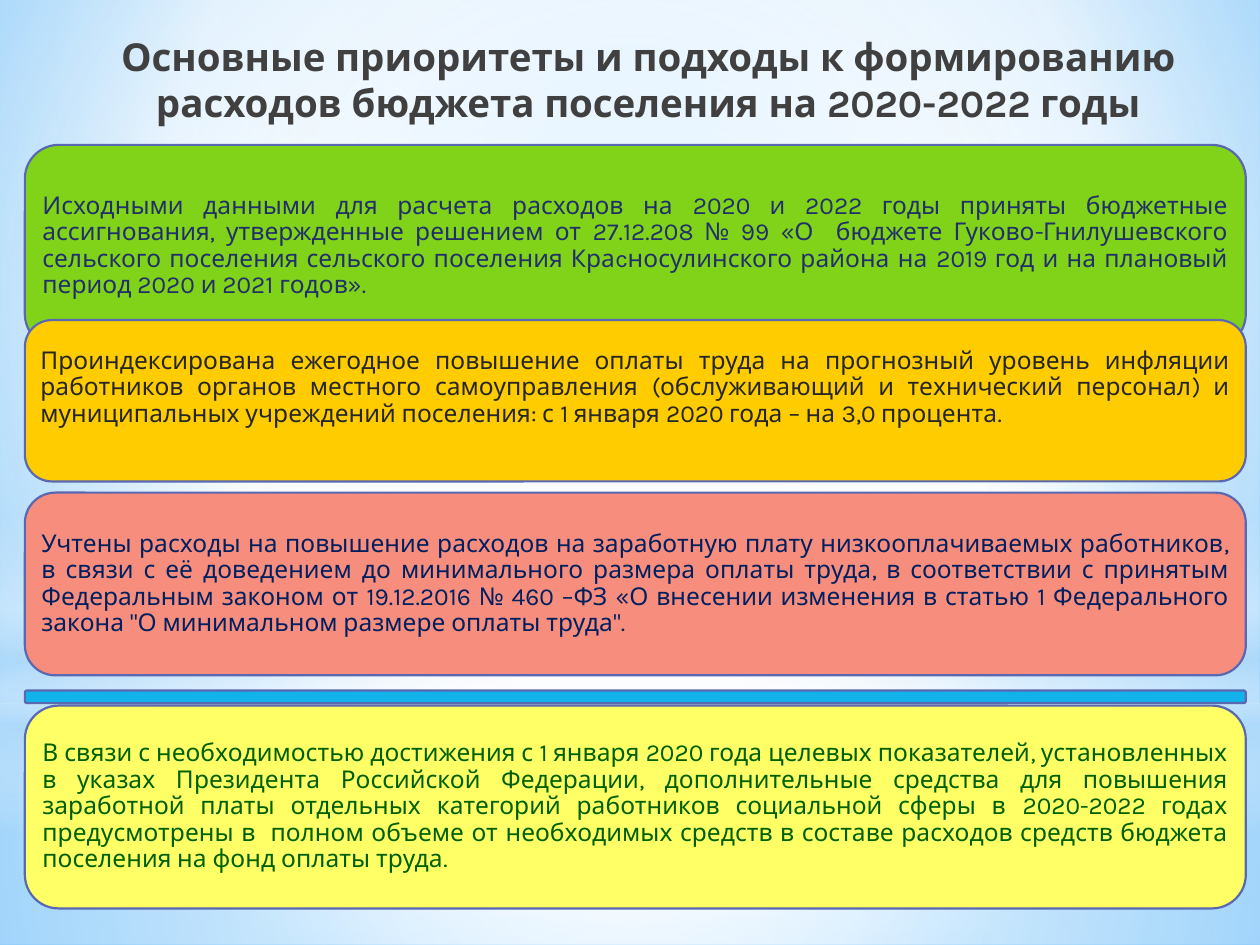
from dataclasses import dataclass
from typing import NamedTuple

from lxml.etree import SubElement
from pptx import Presentation
from pptx.dml.color import RGBColor
from pptx.enum.shapes import MSO_SHAPE
from pptx.enum.text import MSO_ANCHOR, PP_ALIGN
from pptx.oxml.ns import qn
from pptx.slide import Slide
from pptx.text.text import _Paragraph
from pptx.util import Pt


@dataclass(frozen=True)
class Theme:
    font: str = "Karla"
    title_size: float = 22
    body_size: float = 14
    title: str = "404040"
    border: str = "5968B0"
    border_width: float = 1.25
    white: str = "FFFFFF"
    haze: str = "B4DCFA"
    sky: str = "9ED5FF"
    deep_sky: str = "5BB9FF"


class Stop(NamedTuple):
    position: int
    color: str
    opacity: int = 100


class Glow(NamedTuple):
    outline: MSO_SHAPE
    top: float
    height: float
    stops: list[Stop]
    angle: int | None = None


class Panel(NamedTuple):
    top: float
    height: float
    fill: str
    ink: str = ""
    text: str = ""
    lift: float = 0


THEME = Theme()
SLIDE_WIDTH, SLIDE_HEIGHT = 720, 540
PANEL_LEFT, PANEL_WIDTH, PANEL_INSET = 14.2, 697.7, 4.4
CENTER = (50, 50, 50, 50)
TITLE = "Основные приоритеты и подходы к формированию расходов бюджета поселения на 2020-2022 годы"

SKY = [Stop(0, THEME.sky), Stop(60, THEME.white), Stop(100, THEME.deep_sky)]
GLOWS = [
    Glow(MSO_SHAPE.RECTANGLE, 401.8, 138.2,
         [Stop(0, THEME.white, 91), Stop(37, THEME.white, 76), Stop(100, THEME.haze, 79)]),
    Glow(MSO_SHAPE.RECTANGLE, 0, 401.8,
         [Stop(0, THEME.white, 89), Stop(48, THEME.white, 62), Stop(100, THEME.haze, 79)]),
    Glow(MSO_SHAPE.RECTANGLE, 296.6, 180,
         [Stop(0, THEME.white, 0), Stop(29, THEME.white, 30), Stop(45, THEME.haze, 40),
          Stop(55, THEME.white, 26), Stop(65, THEME.haze, 60), Stop(100, THEME.white, 0)], 90),
    Glow(MSO_SHAPE.OVAL, 126, 401.8, [Stop(0, THEME.white), Stop(56, THEME.white, 0)]),
]
PANELS = [
    Panel(82.8, 115.9, "81D31A", "21306A",
          "Исходными данными для расчета расходов на 2020 и 2022 годы приняты бюджетные ассигнования, "
          "утвержденные решением от 27.12.208 № 99 «О  бюджете Гуково-Гнилушевского сельского поселения "
          "сельского поселения Краcносулинского района на 2019 год и на плановый период 2020 и 2021 годов»."),
    Panel(182.9, 92.2, "FFCC00", "262626",
          "Проиндексирована ежегодное повышение оплаты труда на прогнозный уровень инфляции работников "
          "органов местного самоуправления (обслуживающий и технический персонал) и муниципальных "
          "учреждений поселения: с 1 января 2020 года – на 3,0 процента.", 15),
    Panel(281.5, 104.4, "F78D7C", "002060",
          "Учтены расходы на повышение расходов на заработную плату низкооплачиваемых работников, в связи "
          "с её доведением до минимального размера оплаты труда, в соответствии с принятым Федеральным "
          "законом от 19.12.2016 № 460 –ФЗ «О внесении изменения в статью 1 Федерального закона "
          '"О минимальном размере оплаты труда".'),
    Panel(394.6, 7.2, "12B2EB"),
    Panel(403.2, 115.9, "FFFF66", "006000",
          "В связи с необходимостью достижения с 1 января 2020 года целевых показателей, установленных "
          "в указах Президента Российской Федерации, дополнительные средства для повышения заработной "
          "платы отдельных категорий работников социальной сферы в 2020-2022 годах предусмотрены "
          "в  полном объеме от необходимых средств в составе расходов средств бюджета поселения "
          "на фонд оплаты труда."),
]


def paint_gradient(fill, stops: list[Stop], focus: tuple = CENTER, angle: int | None = None) -> None:
    """Fill with any number of stops, linear when an angle is given and circular otherwise."""
    fill.gradient()
    gradient = fill._fill._gradFill
    for child in list(gradient):
        gradient.remove(child)
    stop_list = SubElement(gradient, qn("a:gsLst"))
    for stop in stops:
        mark = SubElement(stop_list, qn("a:gs"), pos=str(stop.position * 1000))
        color = SubElement(mark, qn("a:srgbClr"), val=stop.color)
        if stop.opacity < 100:
            SubElement(color, qn("a:alpha"), val=str(stop.opacity * 1000))
    if angle is not None:
        SubElement(gradient, qn("a:lin"), ang=str(angle * 60000), scaled="0")
        return
    circle = SubElement(gradient, qn("a:path"), {"path": "circle"})
    sides = {side: str(share * 1000) for side, share in zip("ltrb", focus)}
    SubElement(circle, qn("a:fillToRect"), sides)


def style_text(paragraph: _Paragraph, size: float, color: str, bold: bool = False) -> None:
    """Give every run of a paragraph the slide's font."""
    for run in paragraph.runs:
        run.font.name = THEME.font
        run.font.size = Pt(size)
        run.font.bold = bold
        run.font.color.rgb = RGBColor.from_string(color)


def draw_glow(slide: Slide, glow: Glow) -> None:
    """Draw one translucent full-width layer of the backdrop."""
    layer = slide.shapes.add_shape(glow.outline, 0, Pt(glow.top), Pt(SLIDE_WIDTH), Pt(glow.height))
    layer.shadow.inherit = False
    layer.line.fill.background()
    paint_gradient(layer.fill, glow.stops, angle=glow.angle)


def draw_title(slide: Slide) -> None:
    """Draw the centred heading."""
    heading = slide.shapes.add_textbox(Pt(54), Pt(15.1), Pt(629.3), Pt(62.6)).text_frame
    heading.word_wrap = True
    heading.margin_left = Pt(10.8)
    heading.text = TITLE
    paragraph = heading.paragraphs[0]
    paragraph.alignment = PP_ALIGN.CENTER
    paragraph.space_before, paragraph.space_after = Pt(4.4), Pt(3)
    style_text(paragraph, THEME.title_size, THEME.title, bold=True)


def draw_panel(slide: Slide, panel: Panel) -> None:
    """Draw a rounded panel with its justified text, if it has any."""
    card = slide.shapes.add_shape(MSO_SHAPE.ROUNDED_RECTANGLE, Pt(PANEL_LEFT), Pt(panel.top),
                                  Pt(PANEL_WIDTH), Pt(panel.height))
    card.shadow.inherit = False
    card.fill.solid()
    card.fill.fore_color.rgb = RGBColor.from_string(panel.fill)
    card.line.color.rgb = RGBColor.from_string(THEME.border)
    card.line.width = Pt(THEME.border_width)
    if not panel.text:
        return
    body = card.text_frame
    body.word_wrap = True
    body.vertical_anchor = MSO_ANCHOR.MIDDLE
    body.margin_left = body.margin_right = body.margin_top = Pt(PANEL_INSET)
    body.margin_bottom = Pt(PANEL_INSET + panel.lift)
    body.text = panel.text
    paragraph = body.paragraphs[0]
    paragraph.alignment = PP_ALIGN.JUSTIFY
    paragraph.line_spacing = 0.9
    paragraph.space_after = Pt(5)
    style_text(paragraph, THEME.body_size, panel.ink)


def main() -> None:
    """Build the slide and save it."""
    presentation = Presentation()
    presentation.slide_width, presentation.slide_height = Pt(SLIDE_WIDTH), Pt(SLIDE_HEIGHT)
    slide = presentation.slides.add_slide(presentation.slide_layouts[6])
    paint_gradient(slide.background.fill, SKY, focus=(20, 10, 20, 60))
    for glow in GLOWS:
        draw_glow(slide, glow)
    draw_title(slide)
    for panel in PANELS:
        draw_panel(slide, panel)
    presentation.save("out.pptx")


if __name__ == "__main__":
    main()
